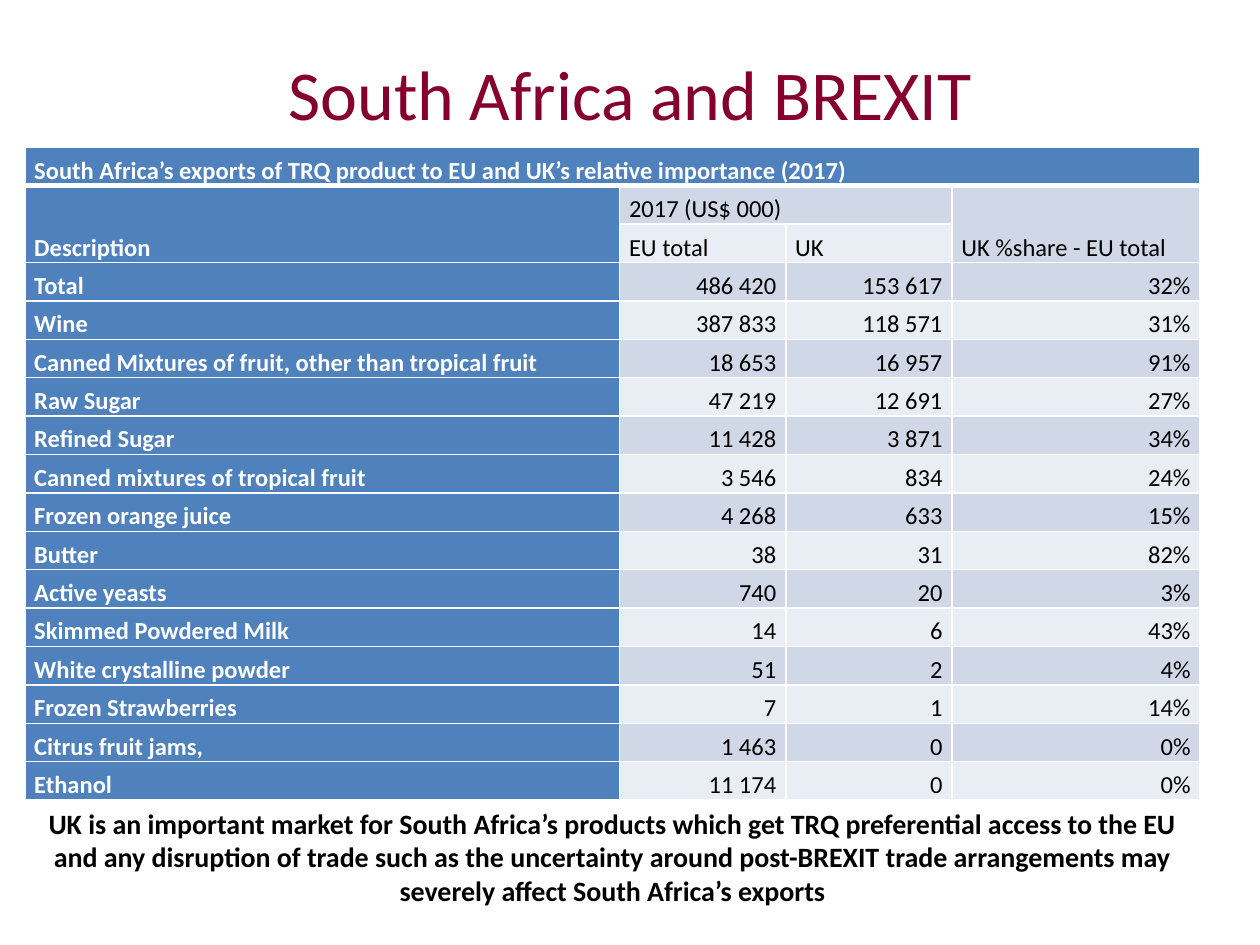
from lxml import etree
from pptx import Presentation
from pptx.dml.color import RGBColor
from pptx.enum.text import MSO_ANCHOR, PP_ALIGN
from pptx.oxml.ns import qn
from pptx.util import Cm, Pt

LEFT, MID, RIGHT = PP_ALIGN.LEFT, PP_ALIGN.CENTER, PP_ALIGN.RIGHT
TOP, CENTRE, BASE = MSO_ANCHOR.TOP, MSO_ANCHOR.MIDDLE, MSO_ANCHOR.BOTTOM

ROWS = [
    ["South Africa’s exports of TRQ product to EU and UK’s relative importance (2017)", "", "", ""],
    ["Description", "2017 (US$ 000)", "", "UK %share - EU total"],
    ["", "EU total", "UK", ""],
    ["Total", "486 420", "153 617", "32%"],
    ["Wine", "387 833", "118 571", "31%"],
    ["Canned Mixtures of fruit, other than tropical fruit", "18 653", "16 957", "91%"],
    ["Raw Sugar", "47 219", "12 691", "27%"],
    ["Refined Sugar", "11 428", "3 871", "34%"],
    ["Canned mixtures of tropical fruit", "3 546", "834", "24%"],
    ["Frozen orange juice", "4 268", "633", "15%"],
    ["Butter", "38", "31", "82%"],
    ["Active yeasts", "740", "20", "3%"],
    ["Skimmed Powdered Milk", "14", "6", "43%"],
    ["White crystalline powder", "51", "2", "4%"],
    ["Frozen Strawberries", "7", "1", "14%"],
    ["Citrus fruit jams,", "1 463", "0", "0%"],
    ["Ethanol", "11 174", "0", "0%"],
]
HEADS = 3
WIDTHS = [11.99, 3.35, 3.35, 5]
MERGES = [((0, 0), (0, 3)), ((1, 0), (2, 0)), ((1, 1), (1, 2)), ((1, 3), (2, 3))]
CLOSING = (
    "UK is an important market for South Africa’s products which get TRQ "
    "preferential access to the EU and any disruption of trade such as the "
    "uncertainty around post-BREXIT trade arrangements may severely affect "
    "South Africa’s exports"
)


def color(code):
    return RGBColor.from_string(code)


def write(frame, text, size=14, ink="000000", bold=False, align=LEFT):
    para = frame.paragraphs[0]
    para.alignment = align
    run = para.add_run()
    run.text = text
    font = run.font
    font.name, font.size, font.bold = "Calibri", Pt(size), bold
    font.color.rgb = color(ink)


class Deck:
    white, blue = "FFFFFF", "4F81BD"
    bands = "E9EDF4", "D0D8E8"

    def __init__(self):
        self.file = Presentation()
        self.file.slide_width, self.file.slide_height = Cm(25.4), Cm(19.05)
        self.slide = self.file.slides.add_slide(self.file.slide_layouts[6])

    def text(self, text, x, y, w, h, anchor=TOP, **style):
        frame = self.slide.shapes.add_textbox(Cm(x), Cm(y), Cm(w), Cm(h)).text_frame
        frame.word_wrap = True
        frame.vertical_anchor = anchor
        write(frame, text, align=MID, **style)

    def border(self, cell, row):
        """Draw white cell edges, thicker under the heading row."""
        props = cell._tc.get_or_add_tcPr()
        for side in "LRTB":
            thick = (row, side) in ((0, "B"), (1, "T"))
            line = etree.SubElement(props, qn(f"a:ln{side}"), w=str(Pt(3 if thick else 1)))
            fill = etree.SubElement(line, qn("a:solidFill"))
            etree.SubElement(fill, qn("a:srgbClr"), val=self.white)

    def cell(self, cell, text, row, col):
        head = row == 0 or col == 0
        cell.margin_left = cell.margin_right = Cm(0.19)
        cell.margin_top = cell.margin_bottom = 0
        cell.vertical_anchor = BASE
        self.border(cell, row)
        cell.fill.solid()
        cell.fill.fore_color.rgb = color(self.blue if head else self.bands[row % 2])
        if text:
            write(cell.text_frame, text, bold=head,
                  ink=self.white if head else "000000",
                  align=RIGHT if col and row >= HEADS else LEFT)

    def table(self, rows, widths, merges, x, y, h):
        table = self.slide.shapes.add_table(
            len(rows), len(widths), Cm(x), Cm(y), Cm(sum(widths)), Cm(h)).table
        for col, width in zip(table.columns, widths):
            col.width = Cm(width)
        for i, row in enumerate(rows):
            for j, text in enumerate(row):
                self.cell(table.cell(i, j), text, i, j)
        for first, last in merges:
            table.cell(*first).merge(table.cell(*last))


def main():
    deck = Deck()
    deck.text("South Africa and BREXIT", 1.2, 0.76, 23, 2.2,
              anchor=CENTRE, size=40, ink="86002D")
    deck.text(CLOSING, 0.5, 16.13, 23.7, 2.31, size=16, bold=True)
    deck.table(ROWS, WIDTHS, MERGES, 0.5, 2.97, 13.16)
    deck.file.save("out.pptx")


if __name__ == "__main__":
    main()
